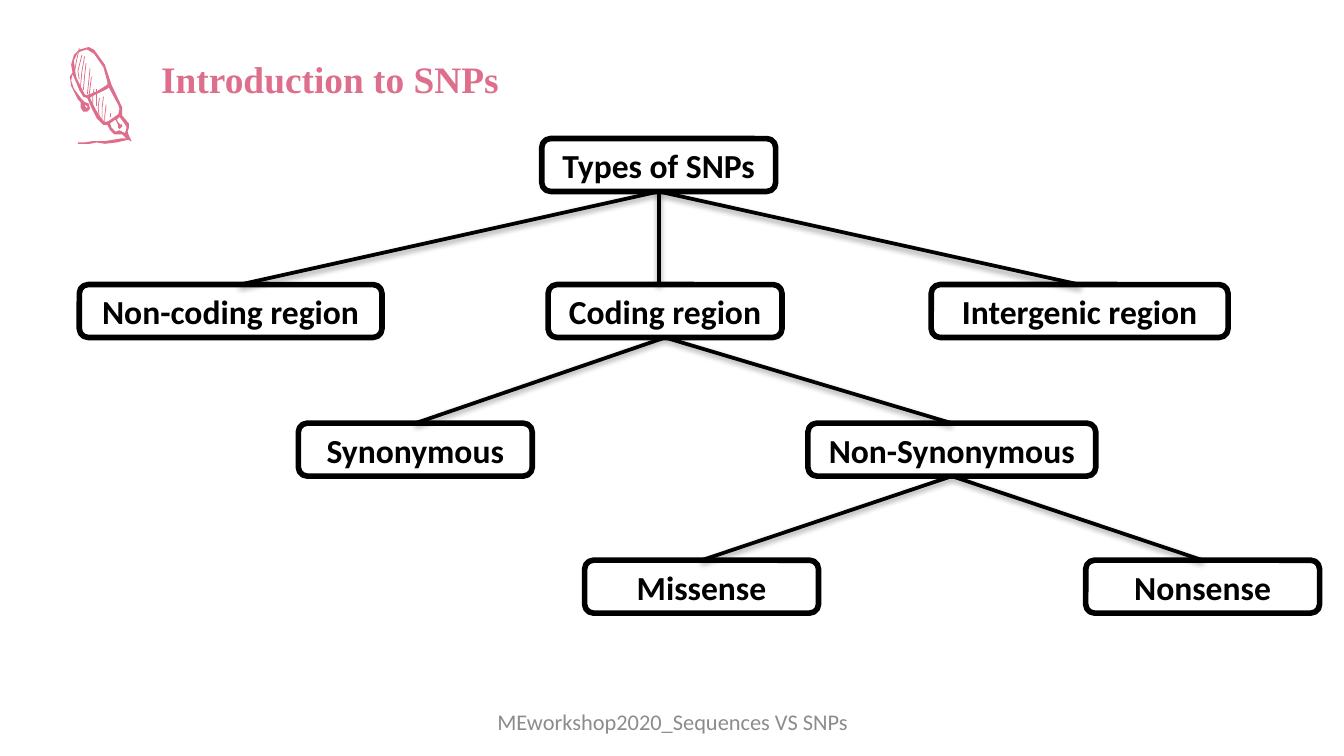
from dataclasses import dataclass

import pptx
import pptx.dml.color
import pptx.enum.shapes
import pptx.enum.text
import pptx.oxml
import pptx.oxml.ns
import pptx.util
from pptx.util import Cm

PINK, BLACK, GRAY = "DD6F8C", "000000", "8C8C8C"
ROW_TOPS = (2.62, 5.38, 8.0, 10.59)
BOX_HEIGHT = 1.0
ALIGN = pptx.enum.text.PP_ALIGN
ANCHOR = pptx.enum.text.MSO_ANCHOR


@dataclass(frozen=True)
class Category:
    """A box of the tree, in cm; line_shift moves the end of its incoming line."""
    text: str
    row: int
    left: float
    width: float = 4.42
    parent: str = ""
    line_shift: float = 0

    @property
    def top(self) -> float:
        return ROW_TOPS[self.row]

    @property
    def center(self) -> float:
        return self.left + self.width / 2


CATEGORIES = (
    Category("Types of SNPs", 0, 10.24),
    Category("Non-coding region", 1, 1.5, 5.72, "Types of SNPs", 0.17),
    Category("Coding region", 1, 10.36, parent="Types of SNPs", line_shift=-0.12),
    Category("Intergenic region", 1, 17.6, 5.61, "Types of SNPs"),
    Category("Synonymous", 2, 5.64, parent="Coding region"),
    Category("Non-Synonymous", 2, 15.27, 5.44, "Coding region"),
    Category("Missense", 3, 11.05, parent="Non-Synonymous"),
    Category("Nonsense", 3, 20.52, parent="Non-Synonymous"),
)

# Pen icon, in hundredths of an inch: the silhouette, then its openings
PEN_CONTOURS = (
    ((96, 101), (95, 98), (96, 95), (96, 92), (91, 86), (91, 80), (83, 63),
     (78, 48), (70, 37), (66, 35), (59, 37), (55, 41), (53, 48), (54, 54),
     (52, 57), (53, 64), (58, 74), (60, 76), (60, 80), (62, 83), (65, 83),
     (67, 81), (66, 77), (63, 76), (61, 74), (55, 66), (53, 60), (54, 55),
     (57, 62), (59, 67), (62, 72), (65, 73), (68, 80), (72, 88), (77, 93),
     (80, 93), (82, 97), (85, 100), (91, 100), (94, 103), (90, 103), (78, 105),
     (69, 105), (63, 106), (58, 106), (58, 107), (63, 107), (67, 107),
     (72, 106), (78, 107), (87, 106), (91, 105), (96, 104), (97, 105), (98, 105)),
    ((65, 79), (65, 80), (64, 80), (63, 78)),
    ((64, 71), (63, 70), (57, 58), (56, 53), (55, 45), (58, 39), (64, 37),
     (65, 37), (70, 40), (77, 50), (80, 61), (80, 63), (72, 68), (67, 70)),
    ((78, 91), (74, 86), (71, 81), (67, 73), (68, 72), (80, 66), (81, 65),
     (88, 78), (89, 81), (88, 85), (81, 90)),
    ((94, 96), (93, 99), (89, 97), (86, 98), (83, 95), (82, 92), (83, 91),
     (86, 89), (88, 93), (88, 95), (89, 96), (91, 94), (91, 92), (90, 93),
     (88, 91), (87, 89), (89, 87), (92, 91), (94, 94)),
)
PEN_HATCHES = (
    ((59, 36), (57, 45), (55, 56)), ((61, 41), (58, 53), (59, 59)),
    ((63, 42), (61, 53), (60, 64)), ((64, 47), (63, 56), (62, 67)),
    ((67, 51), (66, 61), (65, 70)), ((68, 57), (67, 66), (66, 73)),
    ((70, 66), (69, 72), (69, 79)), ((72, 66), (72, 73), (72, 79)),
    ((74, 73), (73, 80), (74, 88)), ((77, 72), (76, 80), (76, 88)),
    ((79, 78), (78, 86), (78, 91)), ((82, 84), (82, 87)),
)
PEN_UNIT = Cm(2.54) / 100


def rgb(color: str) -> pptx.dml.color.RGBColor:
    return pptx.dml.color.RGBColor.from_string(color)


def write(frame, text: str, *, size: float, font: str, color: str, bold: bool = False,
          align=ALIGN.CENTER, anchor=ANCHOR.MIDDLE) -> None:
    frame.word_wrap = True
    frame.auto_size = pptx.enum.text.MSO_AUTO_SIZE.NONE
    frame.vertical_anchor = anchor
    paragraph = frame.paragraphs[0]
    paragraph.alignment = align
    run = paragraph.add_run()
    run.text = text
    run.font.size = pptx.util.Pt(size)
    run.font.name = font
    run.font.bold = bold
    run.font.color.rgb = rgb(color)


def draw_pen(shapes) -> None:
    silhouette, *openings = PEN_CONTOURS
    builder = shapes.build_freeform(*silhouette[0], scale=PEN_UNIT)
    builder.add_line_segments(silhouette[1:], close=True)
    for opening in openings:
        builder.move_to(*opening[0])
        builder.add_line_segments(opening[1:], close=True)
    pen = builder.convert_to_shape()
    pen.shadow.inherit = False
    pen.fill.solid()
    pen.fill.fore_color.rgb = rgb(PINK)
    pen.line.fill.background()

    for start, *rest in PEN_HATCHES:
        builder = shapes.build_freeform(*start, scale=PEN_UNIT)
        builder.add_line_segments(rest, close=False)
        hatch = builder.convert_to_shape()
        hatch.shadow.inherit = False
        hatch.fill.background()
        hatch.line.color.rgb = rgb(PINK)
        hatch.line.width = pptx.util.Pt(0.4)


def draw_category(shapes, category: Category) -> None:
    box = shapes.add_shape(
        pptx.enum.shapes.MSO_SHAPE.ROUNDED_RECTANGLE,
        Cm(category.left), Cm(category.top), Cm(category.width), Cm(BOX_HEIGHT))
    box.shadow.inherit = False
    box.fill.background()
    box.line.color.rgb = rgb(BLACK)
    box.line.width = pptx.util.Pt(3)
    write(box.text_frame, category.text, size=18, font="Calibri", color=BLACK, bold=True)


def draw_branch(shapes, parent: Category, child: Category) -> None:
    branch = shapes.add_connector(
        pptx.enum.shapes.MSO_CONNECTOR.STRAIGHT,
        Cm(parent.center), Cm(parent.top + BOX_HEIGHT),
        Cm(child.center + child.line_shift), Cm(child.top))
    branch.line.color.rgb = rgb(BLACK)
    branch.line.width = pptx.util.Pt(2)
    branch._element.spPr.append(pptx.oxml.parse_xml(
        f'<a:effectLst {pptx.oxml.ns.nsdecls("a")}>'
        '<a:outerShdw blurRad="40000" dist="20000" dir="5400000" rotWithShape="0">'
        f'<a:srgbClr val="{BLACK}"><a:alpha val="38000"/></a:srgbClr>'
        '</a:outerShdw></a:effectLst>'))


def main() -> None:
    presentation = pptx.Presentation()
    presentation.slide_width, presentation.slide_height = Cm(25.4), Cm(14.29)
    slide = presentation.slides.add_slide(presentation.slide_layouts[5])
    shapes = slide.shapes

    title = shapes.title
    title.left, title.top, title.width, title.height = Cm(2.79), Cm(0.94), Cm(9.25), Cm(1.12)
    write(title.text_frame, "Introduction to SNPs", size=20, font="Times New Roman",
          color=PINK, bold=True, align=ALIGN.LEFT, anchor=ANCHOR.TOP)
    draw_pen(shapes)

    footer = shapes.add_textbox(Cm(8.69), Cm(13.26), Cm(8.05), Cm(0.76))
    write(footer.text_frame, "MEworkshop2020_Sequences VS SNPs",
          size=12, font="Calibri", color=GRAY)

    for category in CATEGORIES:
        draw_category(shapes, category)
    by_text = {category.text: category for category in CATEGORIES}
    for category in CATEGORIES:
        if category.parent:
            draw_branch(shapes, by_text[category.parent], category)

    presentation.save("out.pptx")


if __name__ == "__main__":
    main()
